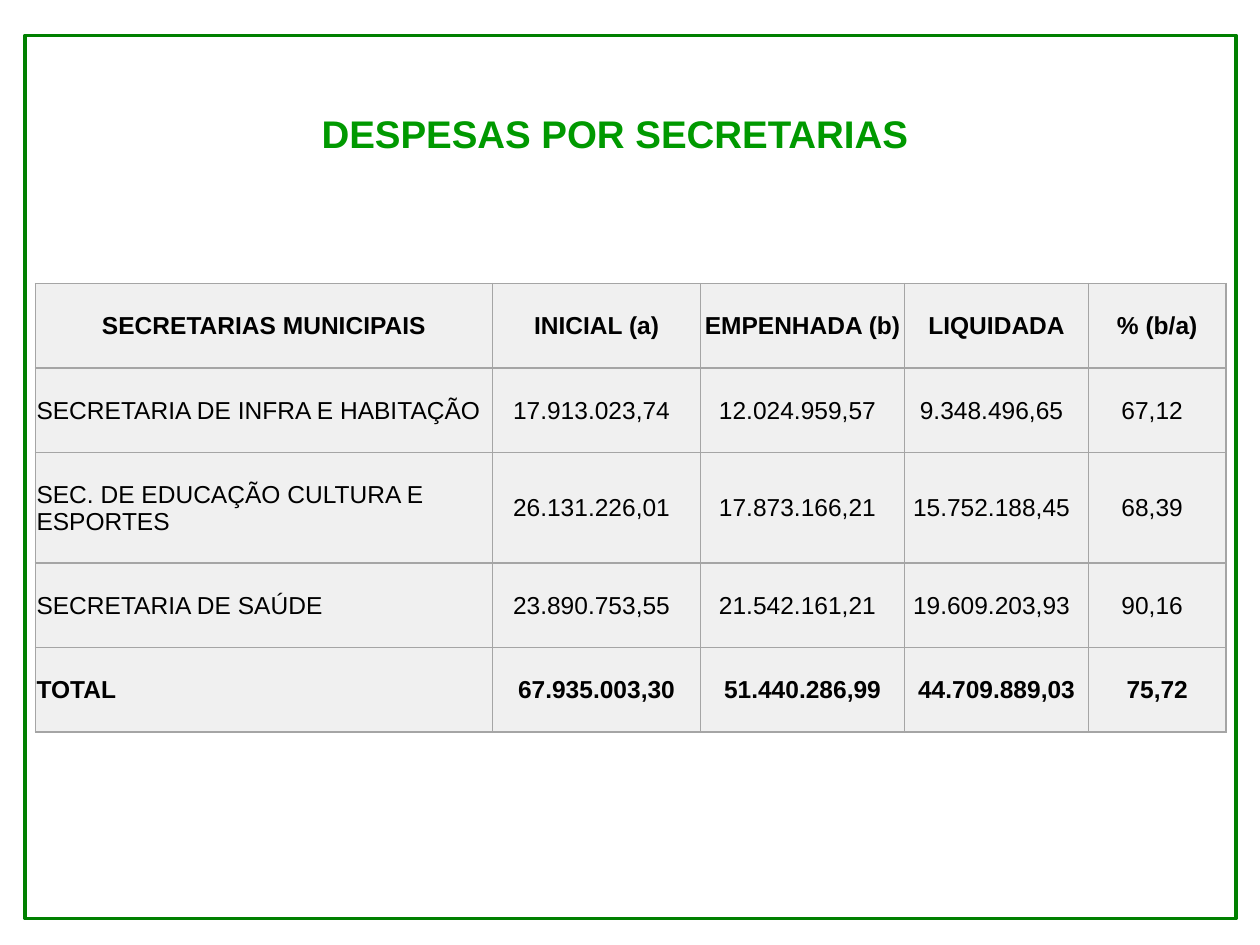
from lxml import etree
from pptx import Presentation
from pptx.dml.color import RGBColor
from pptx.enum.shapes import MSO_SHAPE
from pptx.enum.text import MSO_ANCHOR, PP_ALIGN
from pptx.oxml.ns import qn
from pptx.util import Inches, Pt

RECTANGLE = MSO_SHAPE.RECTANGLE
MIDDLE, BOTTOM = MSO_ANCHOR.MIDDLE, MSO_ANCHOR.BOTTOM
LEFT, CENTER = PP_ALIGN.LEFT, PP_ALIGN.CENTER

COLORS = {"frame": "008000", "title": "009900", "text": "000000",
          "cell": "F0F0F0", "border": "A5A5A5"}
TITLE_ONLY = 5

ROWS = [
    ("SECRETARIAS MUNICIPAIS", "INICIAL (a)", "EMPENHADA (b)", "LIQUIDADA", "% (b/a)"),
    ("SECRETARIA DE INFRA E HABITAÇÃO", "17.913.023,74", "12.024.959,57", "9.348.496,65", "67,12"),
    ("SEC. DE EDUCAÇÃO CULTURA E ESPORTES", "26.131.226,01", "17.873.166,21", "15.752.188,45", "68,39"),
    ("SECRETARIA DE SAÚDE", "23.890.753,55", "21.542.161,21", "19.609.203,93", "90,16"),
    ("TOTAL", "67.935.003,30", "51.440.286,99", "44.709.889,03", "75,72"),
]
COLUMN_WIDTHS = [3.63, 1.65, 1.62, 1.46, 1.09]
ROW_HEIGHTS = [0.67, 0.67, 0.88, 0.67, 0.67]


def rgb(name):
    return RGBColor.from_string(COLORS[name])


class ReportSlide:
    """Holds the style and the slide being built."""

    font_name = "Arial"
    title_size = 22
    table_size = 14

    def __init__(self, deck):
        self.slide = deck.slides.add_slide(deck.slide_layouts[TITLE_ONLY])

    def set_text(self, frame, text, size, color, bold, align):
        frame.text = text
        para = frame.paragraphs[0]
        para.alignment = align
        font = para.font
        font.name, font.size, font.bold = self.font_name, Pt(size), bold
        font.color.rgb = rgb(color)

    def title(self, text, left, top, width, height):
        box = self.slide.shapes.title
        box.left, box.top = Inches(left), Inches(top)
        box.width, box.height = Inches(width), Inches(height)
        frame = box.text_frame
        frame.vertical_anchor = BOTTOM
        frame.margin_right = Inches(0.27)
        self.set_text(frame, text, self.title_size, "title", True, CENTER)

    def frame(self, left, top, width, height):
        box = self.slide.shapes.add_shape(
            RECTANGLE, Inches(left), Inches(top), Inches(width), Inches(height))
        box.shadow.inherit = False
        box.fill.background()
        box.line.color.rgb = rgb("frame")
        box.line.width = Pt(2)

    def table(self, rows, left, top, widths, heights):
        table = self.slide.shapes.add_table(
            len(rows), len(widths), Inches(left), Inches(top),
            Inches(sum(widths)), Inches(sum(heights))).table
        table.first_row = table.horz_banding = False
        for column, width in zip(table.columns, widths):
            column.width = Inches(width)
        for row, height in zip(table.rows, heights):
            row.height = Inches(height)
        for row_index, row in enumerate(rows):
            is_header = row_index == 0
            is_bold = is_header or row_index == len(rows) - 1
            for column_index, text in enumerate(row):
                is_label = column_index == 0
                cell = table.cell(row_index, column_index)
                cell.vertical_anchor = MIDDLE
                cell.margin_left = cell.margin_top = Inches(0.01)
                cell.margin_right = Inches(0.01 if is_bold or is_label else 0.09)
                cell.margin_bottom = 0
                align = LEFT if is_label and not is_header else CENTER
                self.set_text(cell.text_frame, text, self.table_size, "text", is_bold, align)
                self.borders(cell)
                cell.fill.solid()
                cell.fill.fore_color.rgb = rgb("cell")

    def borders(self, cell):
        properties = cell._tc.get_or_add_tcPr()
        for side in ("a:lnL", "a:lnR", "a:lnT", "a:lnB"):
            line = etree.SubElement(properties, qn(side), w=str(Pt(1)))
            fill = etree.SubElement(line, qn("a:solidFill"))
            etree.SubElement(fill, qn("a:srgbClr"), val=COLORS["border"])


def main():
    deck = Presentation()
    deck.slide_width, deck.slide_height = Inches(10), Inches(7.5)
    page = ReportSlide(deck)
    page.table(ROWS, 0.28, 2.25, COLUMN_WIDTHS, ROW_HEIGHTS)
    page.frame(0.2, 0.28, 9.61, 7.01)
    page.title("DESPESAS POR SECRETARIAS", 0.91, 0.52, 8.11, 0.77)
    deck.save("out.pptx")


if __name__ == "__main__":
    main()
